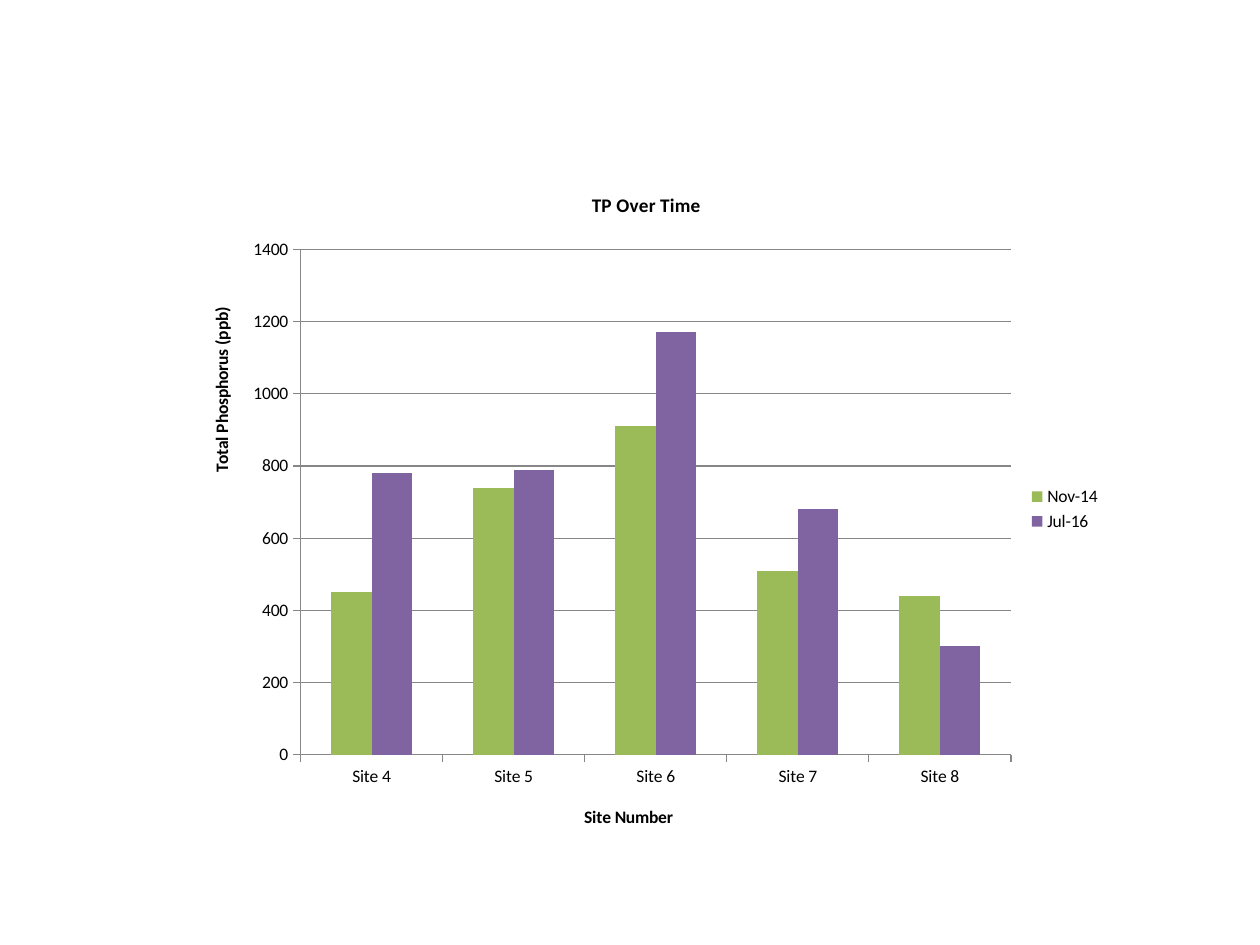
"""Build a slide with a clustered column chart of total phosphorus by site."""
from typing import NamedTuple

from lxml import etree
from pptx import Presentation
from pptx.chart.data import CategoryChartData
from pptx.dml.color import RGBColor
from pptx.enum.chart import XL_CHART_TYPE, XL_LEGEND_POSITION, XL_TICK_MARK
from pptx.oxml.ns import qn
from pptx.util import Inches, Pt

COLUMN = XL_CHART_TYPE.COLUMN_CLUSTERED
RIGHT = XL_LEGEND_POSITION.RIGHT
OUTSIDE = XL_TICK_MARK.OUTSIDE

BLACK = RGBColor(0x00, 0x00, 0x00)
GRAY = RGBColor(0x87, 0x87, 0x87)
GREEN = RGBColor(0x9B, 0xBB, 0x59)
PURPLE = RGBColor(0x80, 0x64, 0xA2)
FONT = "Calibri"


class Survey(NamedTuple):
    name: str
    values: tuple[int, ...]
    color: RGBColor


SITES = [f"Site {n}" for n in range(4, 9)]
SURVEYS = [
    Survey("Nov-14", (450, 740, 910, 510, 440), GREEN),
    Survey("Jul-16", (780, 790, 1170, 680, 300), PURPLE),
]


def place(parent, **parts: float | str) -> None:
    """Give a chart part a manual layout in fractions of the chart."""
    layout = parent.find(qn("c:layout"))
    if layout is None:
        layout = etree.Element(qn("c:layout"))
        parent.insert(0, layout)
    manual = etree.SubElement(layout, qn("c:manualLayout"))
    for tag, value in parts.items():
        etree.SubElement(manual, qn(f"c:{tag}")).set("val", str(value))


def set_font(font, size: float, bold: bool = False) -> None:
    """Apply the chart's typeface and colour."""
    font.name, font.size, font.bold = FONT, Pt(size), bold
    font.color.rgb = BLACK


def set_title(title, text: str, size: float) -> None:
    """Write a bold chart or axis title."""
    frame = title.text_frame
    frame.text = text
    set_font(frame.paragraphs[0].font, size, True)


def style_axis(axis, text: str, x: float, y: float) -> None:
    """Format an axis and place its title."""
    axis.major_tick_mark = OUTSIDE
    axis.format.line.color.rgb = GRAY
    set_font(axis.tick_labels.font, 10)
    set_title(axis.axis_title, text, 10)
    place(axis.axis_title.element, xMode="edge", yMode="edge", x=x, y=y)


def add_chart(slide) -> None:
    """Add the phosphorus chart."""
    data = CategoryChartData()
    data.categories = SITES
    for survey in SURVEYS:
        data.add_series(survey.name, survey.values)
    chart = slide.shapes.add_chart(
        COLUMN, Inches(1.42), Inches(1.33), Inches(7.42), Inches(5.42), data
    ).chart
    set_font(chart.font, 10)
    set_title(chart.chart_title, "TP Over Time", 11)

    plot = chart.plots[0]
    plot.gap_width, plot.overlap = 150, 0
    plot.vary_by_categories = False
    for series, survey in zip(plot.series, SURVEYS):
        series.format.fill.solid()
        series.format.fill.fore_color.rgb = survey.color

    style_axis(chart.category_axis, "Site Number", 0.43, 0.93)
    scale = chart.value_axis
    style_axis(scale, "Total Phosphorus (ppb)", 0.03, 0.2)
    scale.minimum_scale, scale.maximum_scale, scale.major_unit = 0, 1400, 200
    scale.has_major_gridlines = True
    scale.major_gridlines.format.line.color.rgb = GRAY

    chart.has_legend = True
    chart.legend.position = RIGHT
    chart.legend.include_in_layout = False
    set_font(chart.legend.font, 10)
    area = chart.element.find(f".//{qn('c:plotArea')}")
    place(area, layoutTarget="inner", xMode="edge", yMode="edge",
          x=0.13, y=0.12, w=0.76, h=0.74)


def main() -> None:
    """Build and save the slide."""
    deck = Presentation()
    deck.slide_width, deck.slide_height = Inches(10), Inches(7.5)
    add_chart(deck.slides.add_slide(deck.slide_layouts[6]))
    deck.save("out.pptx")


if __name__ == "__main__":
    main()
